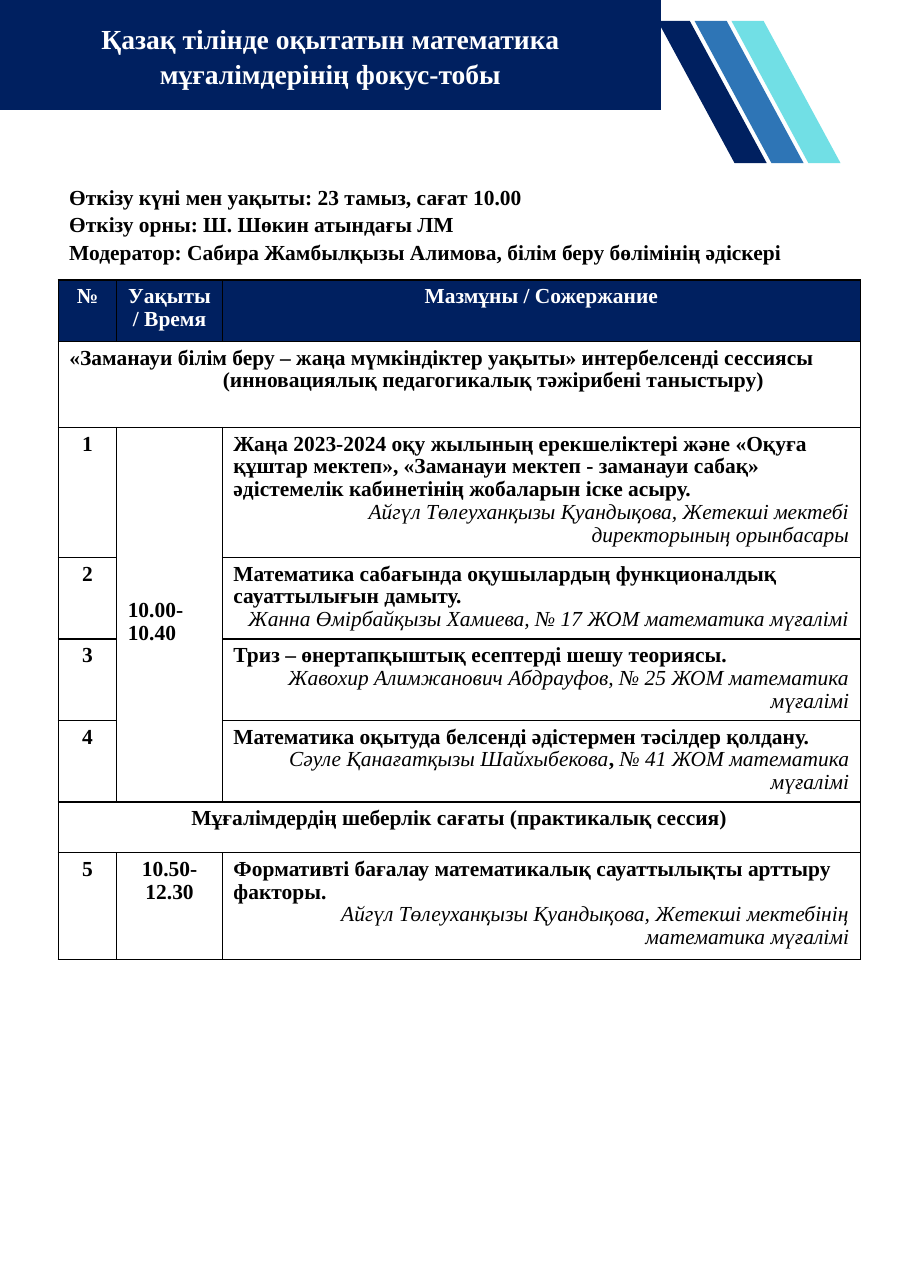
from lxml import etree
from pptx import Presentation
from pptx import util as u
from pptx.dml.color import RGBColor
from pptx.enum import shapes, text
from pptx.oxml.ns import qn

PAGE_W, PAGE_H = 8.27, 11.69
FONT = "Times New Roman"
COLORS = {"navy": "002060", "blue": "2E75B6", "aqua": "71DFE5",
          "white": "FFFFFF", "black": "000000"}
LEFT, CENTER, RIGHT = text.PP_ALIGN.LEFT, text.PP_ALIGN.CENTER, text.PP_ALIGN.RIGHT

TITLE = ["Қазақ тілінде оқытатын математика", "мұғалімдерінің фокус-тобы"]
DETAILS = [
    "Өткізу күні мен уақыты: 23 тамыз, сағат 10.00",
    "Өткізу орны: Ш. Шөкин атындағы ЛМ",
    "Модератор: Сабира Жамбылқызы Алимова, білім беру бөлімінің әдіскері",
]
HEADINGS = ["№", "Уақыты / Время", "Мазмұны / Сожержание"]
SESSIONS = {
    1: ["«Заманауи білім беру – жаңа мүмкіндіктер уақыты» интербелсенді сессиясы",
        "(инновациялық педагогикалық тәжірибені таныстыру)"],
    6: ["Мұғалімдердің шеберлік сағаты (практикалық сессия)"],
}
TALKS = [
    (2, "Жаңа 2023-2024 оқу жылының ерекшеліктері және «Оқуға құштар мектеп», "
        "«Заманауи мектеп - заманауи сабақ» әдістемелік кабинетінің жобаларын іске асыру.",
     ["Айгүл Төлеуханқызы Қуандықова, Жетекші мектебі директорының орынбасары"]),
    (3, "Математика сабағында оқушылардың функционалдық сауаттылығын дамыту.",
     ["Жанна Өмірбайқызы Хамиева, № 17 ЖОМ математика мүғалімі"]),
    (4, "Триз – өнертапқыштық есептерді шешу теориясы.",
     ["Жавохир Алимжанович Абдрауфов, № 25 ЖОМ математика мүғалімі"]),
    (5, "Математика оқытуда белсенді әдістермен тәсілдер қолдану.",
     ["Сәуле Қанағатқызы Шайхыбекова", ", ", "№ 41 ЖОМ математика мүғалімі"]),
    (7, "Формативті бағалау математикалық сауаттылықты арттыру факторы.",
     ["Айгүл Төлеуханқызы Қуандықова, Жетекші мектебінің\vматематика мүғалімі"]),
]
TIMES = {2: "10.00- 10.40", 7: "10.50-12.30"}
COLUMNS = [0.53, 0.96, 5.79]
ROWS = [0.56, 0.78, 1.18, 0.74, 0.74, 0.74, 0.46, 0.97]
TABLE_LEFT, TABLE_TOP = 0.53, 2.54
BANNER_TOP, BANNER_H = 0.19, 1.29
STRIPES = ["navy", "blue", "aqua"]
STRIPE_LEFT, STRIPE_STEP, STRIPE_W = 5.97, 0.335, 0.99


def rgb(name):
    return RGBColor.from_string(COLORS[name])


def style(font, color="black", size=14, bold=True, italic=False):
    font.name, font.size = FONT, u.Pt(size)
    font.bold, font.italic = bold, italic
    font.color.rgb = rgb(color)


def write(frame, lines, align, spacing, **look):
    for i, line in enumerate(lines):
        paragraph = frame.paragraphs[0] if i == 0 else frame.add_paragraph()
        paragraph.text = line
        paragraph.alignment, paragraph.line_spacing = align, spacing
        style(paragraph.font, **look)


def paint(shape, color):
    shape.shadow.inherit = False
    shape.fill.solid()
    shape.fill.fore_color.rgb = rgb(color)
    shape.line.fill.background()


def border(cell):
    properties = cell._tc.get_or_add_tcPr()
    for side in ("lnL", "lnR", "lnT", "lnB"):
        line = etree.SubElement(properties, qn("a:" + side), w=str(u.Pt(1)))
        solid = etree.SubElement(line, qn("a:solidFill"))
        etree.SubElement(solid, qn("a:srgbClr"), val=COLORS["black"])


def draw_banner(slide):
    bottom = BANNER_TOP + BANNER_H
    outline = [(0.19, BANNER_TOP), (5.76, BANNER_TOP), (6.42, bottom), (0.19, bottom)]
    builder = slide.shapes.build_freeform(*outline[0], scale=u.Inches(1))
    builder.add_line_segments(outline[1:], close=True)
    banner = builder.convert_to_shape()
    paint(banner, "navy")
    banner.text_frame.word_wrap = True
    banner.text_frame.vertical_anchor = text.MSO_ANCHOR.MIDDLE
    write(banner.text_frame, TITLE, CENTER, 1.06, color="white", size=18)
    for i, color in enumerate(STRIPES):
        stripe = slide.shapes.add_shape(
            shapes.MSO_SHAPE.PARALLELOGRAM, u.Inches(STRIPE_LEFT + i * STRIPE_STEP),
            u.Inches(BANNER_TOP), u.Inches(STRIPE_W), u.Inches(BANNER_H))
        stripe.adjustments[0] = 0.705
        stripe.rotation = 180
        stripe._element.spPr.xfrm.set("flipH", "1")
        paint(stripe, color)


def draw_details(slide):
    details = slide.shapes.add_textbox(
        u.Inches(TABLE_LEFT), u.Inches(1.61), u.Inches(7.39), u.Inches(0.81))
    details.text_frame.word_wrap = True
    write(details.text_frame, DETAILS, LEFT, 1.06)


def draw_programme(slide):
    table = slide.shapes.add_table(
        len(ROWS), len(COLUMNS), u.Inches(TABLE_LEFT), u.Inches(TABLE_TOP),
        u.Inches(sum(COLUMNS)), u.Inches(sum(ROWS))).table
    table.first_row = table.horz_banding = False
    for column, width in zip(table.columns, COLUMNS):
        column.width = u.Inches(width)
    for r, height in enumerate(ROWS):
        table.rows[r].height = u.Inches(height)
        for c in range(len(COLUMNS)):
            cell = table.cell(r, c)
            border(cell)
            if r == 0:
                cell.fill.solid()
                cell.fill.fore_color.rgb = rgb("navy")
            else:
                cell.fill.background()

    def fill_cell(r, c, lines, align=CENTER, color="black"):
        frame = table.cell(r, c).text_frame
        write(frame, lines, align, 0.96, color=color)
        return frame

    for c, heading in enumerate(HEADINGS):
        fill_cell(0, c, [heading], color="white")
    for r, lines in SESSIONS.items():
        table.cell(r, 0).merge(table.cell(r, 2))
        frame = fill_cell(r, 0, lines)
        if len(lines) > 1:
            frame.paragraphs[0].alignment = LEFT
            frame.paragraphs[1]._p.get_or_add_pPr().set("marL", str(u.Inches(0.62)))
    table.cell(2, 1).merge(table.cell(5, 1))
    for r, time in TIMES.items():
        fill_cell(r, 1, [time], LEFT if r == 2 else CENTER)
    table.cell(2, 1).vertical_anchor = text.MSO_ANCHOR.MIDDLE
    table.cell(2, 1).margin_top = u.Inches(0.18)

    for number, (r, topic, speaker) in enumerate(TALKS, 1):
        fill_cell(r, 0, [str(number)])
        frame = fill_cell(r, 2, [topic], LEFT)
        credit = frame.add_paragraph()
        credit.alignment, credit.line_spacing = RIGHT, 0.96
        if len(speaker) == 1:
            credit.text = speaker[0]
            style(credit.font, bold=False, italic=True)
            continue
        for part in speaker:
            run = credit.add_run()
            run.text = part
            style(run.font, bold=part == ", ", italic=part != ", ")


def main():
    deck = Presentation()
    deck.slide_width, deck.slide_height = u.Inches(PAGE_W), u.Inches(PAGE_H)
    slide = deck.slides.add_slide(deck.slide_layouts[6])
    draw_banner(slide)
    draw_programme(slide)
    draw_details(slide)
    deck.save("out.pptx")


if __name__ == "__main__":
    main()
